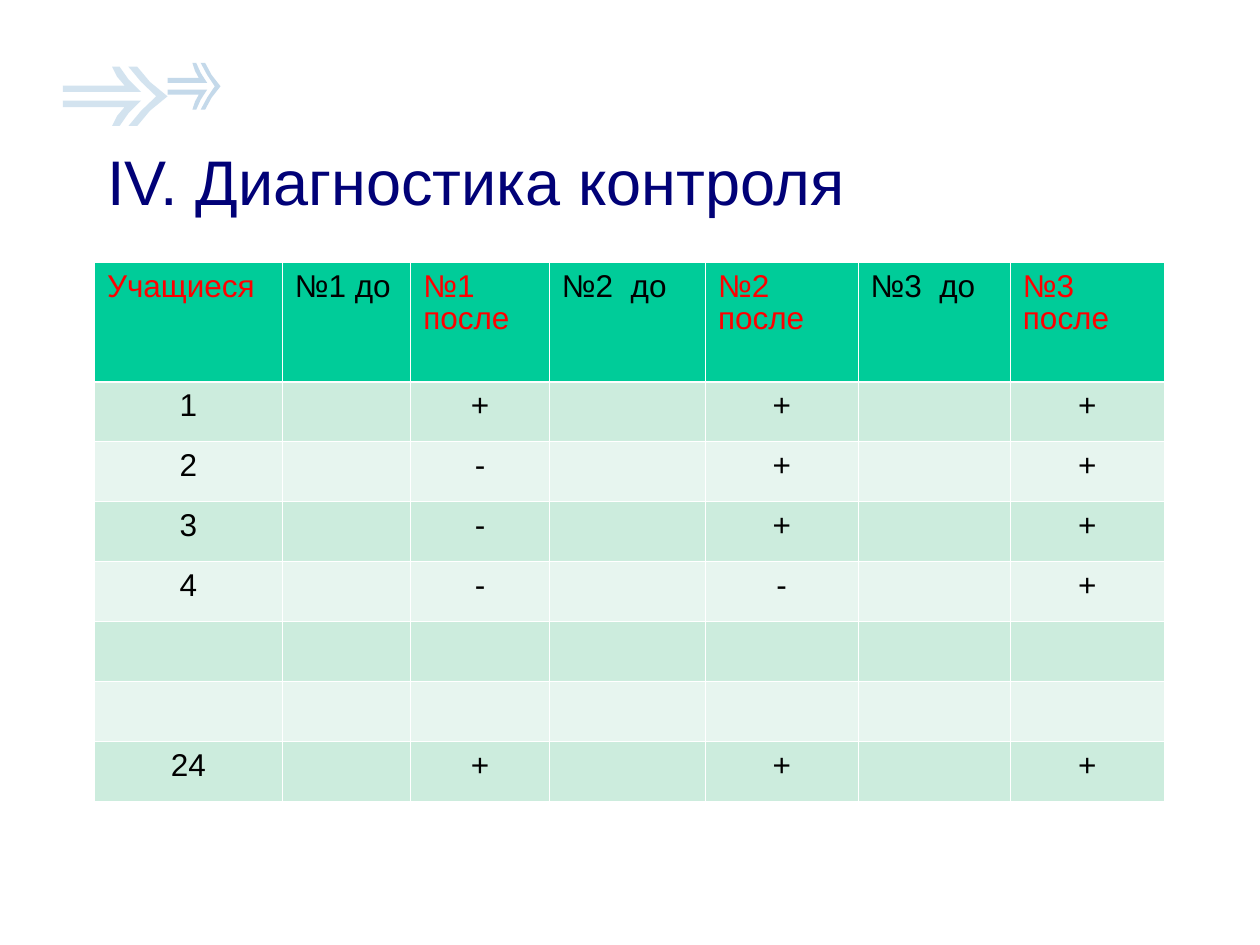
from lxml import etree
from pptx import Presentation
from pptx.dml.color import RGBColor
from pptx.enum.text import MSO_ANCHOR, MSO_AUTO_SIZE, PP_ALIGN
from pptx.oxml.ns import qn
from pptx.util import Inches, Pt

NAVY = RGBColor(0x01, 0x01, 0x77)
RED = RGBColor(0xFF, 0x00, 0x00)
BLACK = RGBColor(0x00, 0x00, 0x00)
WHITE = RGBColor(0xFF, 0xFF, 0xFF)
GREEN = RGBColor(0x00, 0xCC, 0x99)
BAND_DARK = RGBColor(0xCC, 0xEC, 0xDD)
BAND_LIGHT = RGBColor(0xE7, 0xF5, 0xEF)
ARROW_SMALL = RGBColor(0x8A, 0xB5, 0xD6)
ARROW_LARGE = RGBColor(0xA9, 0xC9, 0xE1)

FONT = "Arial"
HEADERS = ["Учащиеся", "№1 до", "№1 после", "№2  до", "№2 после", "№3  до", "№3 после"]
# Pupil, then the results after tests 1, 2 and 3
RESULTS = [
    ("1", "+", "+", "+"),
    ("2", "-", "+", "+"),
    ("3", "-", "+", "+"),
    ("4", "-", "-", "+"),
    ("", "", "", ""),
    ("", "", "", ""),
    ("24", "+", "+", "+"),
]
COL_WIDTHS = [1.49, 1.02, 1.1, 1.24, 1.21, 1.21, 1.22]

# Arrow outline on a grid of 830 by 470, symmetric about its middle line
ARROW_W, ARROW_H = 830, 470
SHAFT = [(0, 200), (0, 150), (490, 150), (430, 80), (390, 0),
         (450, 0), (520, 100), (620, 200)]
HEAD = [(590, 0), (690, 120), (830, 235), (690, 350), (590, 470),
        (520, 470), (620, 350), (740, 235), (620, 120), (520, 0)]
CONTOURS = [SHAFT, [(x, ARROW_H - y) for x, y in SHAFT], HEAD]


def set_borders(cell, widths):
    """Give the cell white borders; widths maps lnL, lnR, lnT, lnB to points."""
    tc_pr = cell._tc.get_or_add_tcPr()
    for i, (tag, width) in enumerate(widths.items()):
        ln = etree.Element(qn("a:" + tag), w=str(Pt(width)))
        fill = etree.SubElement(ln, qn("a:solidFill"))
        etree.SubElement(fill, qn("a:srgbClr"), val=str(WHITE))
        tc_pr.insert(i, ln)


prs = Presentation()
prs.slide_width, prs.slide_height = Inches(10), Inches(7.5)
s = prs.slides.add_slide(prs.slide_layouts[5])

# Decorative arrows
for left, top, width, height, color in [
    (1.33, 0.5, 0.42, 0.37, ARROW_SMALL),
    (0.5, 0.53, 0.83, 0.47, ARROW_LARGE),
]:
    scale = (Inches(width) / ARROW_W, Inches(height) / ARROW_H)
    builder = s.shapes.build_freeform(*CONTOURS[0][0], scale=scale)
    builder.add_line_segments(CONTOURS[0][1:])
    for contour in CONTOURS[1:]:
        builder.move_to(*contour[0])
        builder.add_line_segments(contour[1:])
    sp = builder.convert_to_shape(Inches(left), Inches(top))
    sp.shadow.inherit = False
    sp.fill.solid()
    sp.fill.fore_color.rgb = color
    sp.line.fill.background()
    clr = sp._element.spPr.find(qn("a:solidFill")).find(qn("a:srgbClr"))
    etree.SubElement(clr, qn("a:alpha"), val="50000")

# Title
title = s.shapes.title
title.left, title.top = Inches(0.75), Inches(1.08)
title.width, title.height = Inches(8.5), Inches(1)
tf = title.text_frame
tf.text = "IV. Диагностика контроля"
tf.auto_size = MSO_AUTO_SIZE.NONE
tf.vertical_anchor = MSO_ANCHOR.TOP
p = tf.paragraphs[0]
p.alignment = PP_ALIGN.LEFT
p.font.name, p.font.size = FONT, Pt(36)
p.font.color.rgb = NAVY

# Results table: the header is twice as high as the other rows
rows = [HEADERS] + [[n, "", a, "", b, "", c] for n, a, b, c in RESULTS]
table_height = Inches(4.28)
row_height = table_height // (len(rows) + 1)
table = s.shapes.add_table(len(rows), len(HEADERS), Inches(0.75), Inches(2.08),
                           Inches(8.5), table_height).table
for col, width in zip(table.columns, COL_WIDTHS):
    col.width = Inches(width)

for i, row in enumerate(rows):
    header = i == 0
    table.rows[i].height = row_height * (2 if header else 1)
    for j, text in enumerate(row):
        cell = table.cell(i, j)
        cell.margin_top = Inches(0.07)
        cell.fill.solid()
        cell.fill.fore_color.rgb = GREEN if header else BAND_DARK if i % 2 else BAND_LIGHT
        set_borders(cell, {"lnL": 0.45, "lnR": 0.45,
                           "lnT": 1.47 if i == 1 else 0.45,
                           "lnB": 1.47 if header else 0.45})
        cell.text = text
        p = cell.text_frame.paragraphs[0]
        p.alignment = PP_ALIGN.LEFT if header else PP_ALIGN.CENTER
        p.line_spacing = 0.93
        p.font.name, p.font.size, p.font.bold = FONT, Pt(18), False
        p.font.color.rgb = RED if header and j % 2 == 0 else BLACK

prs.save("out.pptx")
